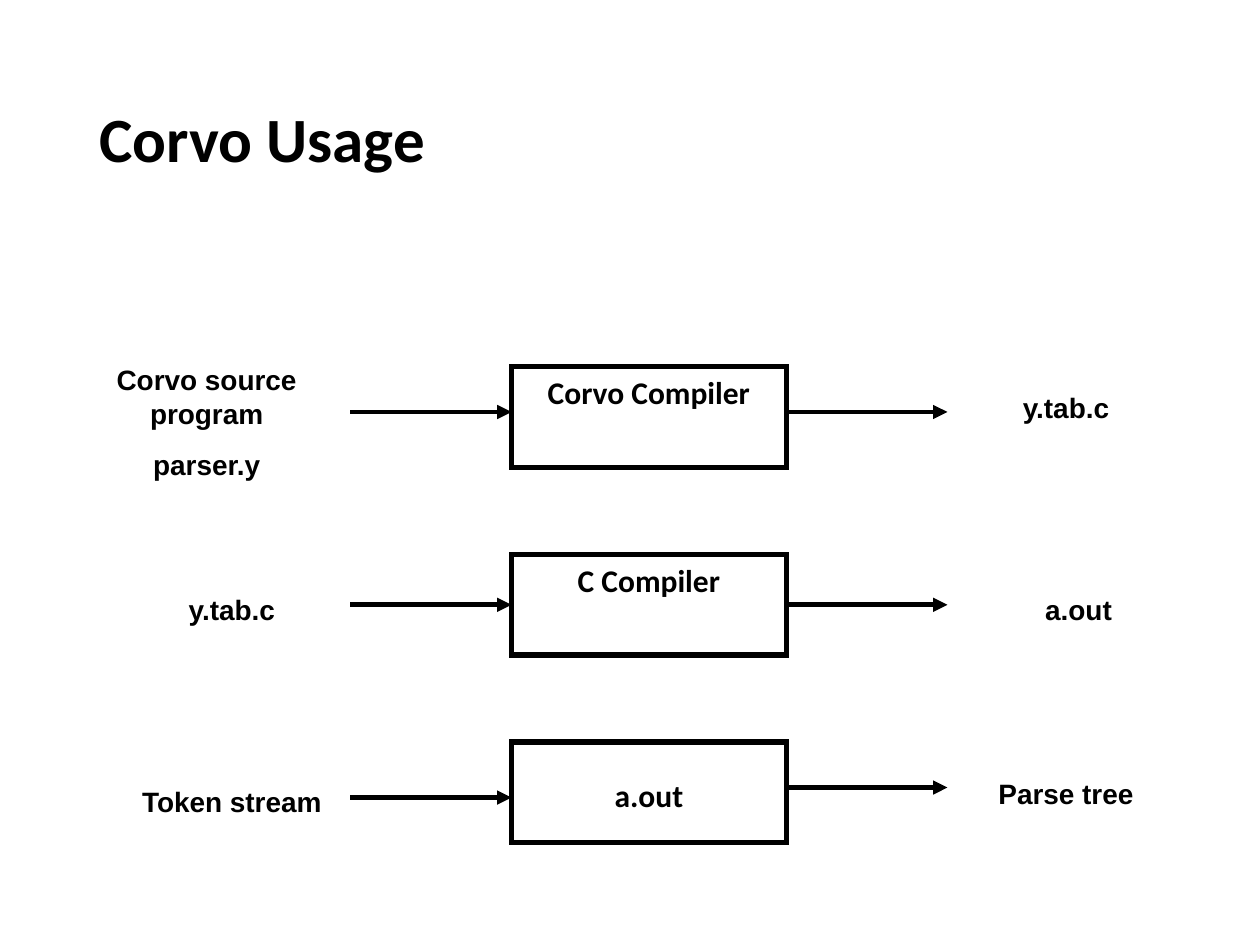
from dataclasses import dataclass

from lxml.etree import SubElement
from pptx import Presentation
from pptx.dml.color import RGBColor
from pptx.enum.shapes import MSO_CONNECTOR, MSO_SHAPE
from pptx.enum.text import MSO_ANCHOR, PP_ALIGN
from pptx.oxml.ns import qn
from pptx.util import Inches, Pt


@dataclass(frozen=True)
class Theme:
    ink: RGBColor = RGBColor(0, 0, 0)
    paper: RGBColor = RGBColor(255, 255, 255)
    heading_font: str = "Calibri"
    label_font: str = "Arial"
    title_size: int = 36
    process_size: int = 18
    label_size: int = 16
    border: float = 3
    arrow: float = 2.75


@dataclass(frozen=True)
class Stage:
    source: str
    process: str
    result: str
    source_box: tuple
    result_box: tuple
    process_top: float = 0
    arrow_in: float = 0.36
    arrow_out: float = 0.36


THEME = Theme()
STAGE_LEFT, STAGE_TOP, STAGE_STEP = 0.5, 2.91, 1.49
PROCESS_LEFT, PROCESS_WIDTH, PROCESS_HEIGHT = 3.56, 2.18, 0.8
PROCESS_INSET, ARROW_LENGTH = 0.1, 1.28

STAGES = [
    Stage("Corvo source program\nparser.y", "Corvo Compiler", "y.tab.c",
          (0, -0.08, 2.28, 0.91), (7.02, 0.14, 1.88, 0.32)),
    Stage("y.tab.c", "C Compiler", "a.out",
          (0.4, 0.25, 1.88, 0.32), (7.12, 0.25, 1.88, 0.32),
          arrow_in=0.4, arrow_out=0.4),
    Stage("Token stream", "a.out", "Parse tree",
          (0.4, 0.29, 1.88, 0.55), (7.02, 0.22, 1.88, 0.32),
          process_top=0.22, arrow_in=0.44),
]


def add_text(slide, text, box, font, size, space_before=0,
             align=PP_ALIGN.CENTER, anchor=MSO_ANCHOR.TOP):
    shape = slide.shapes.add_textbox(*map(Inches, box))
    text_frame = shape.text_frame
    text_frame.word_wrap = True
    text_frame.vertical_anchor = anchor
    text_frame.text = text
    for paragraph in text_frame.paragraphs:
        paragraph.alignment = align
        paragraph.space_before = Pt(space_before)
        for run in paragraph.runs:
            run.font.name = font
            run.font.size = Pt(size)
            run.font.bold = True
            run.font.color.rgb = THEME.ink
    return shape


def add_arrow(slide, left, top):
    connector = slide.shapes.add_connector(
        MSO_CONNECTOR.STRAIGHT, Inches(left), Inches(top),
        Inches(left + ARROW_LENGTH), Inches(top))
    connector.line.color.rgb = THEME.ink
    connector.line.width = Pt(THEME.arrow)
    SubElement(connector.line._get_or_add_ln(), qn("a:tailEnd"), type="triangle")
    SubElement(connector._element.spPr, qn("a:effectLst"))


def add_process(slide, left, top):
    shape = slide.shapes.add_shape(
        MSO_SHAPE.RECTANGLE, Inches(left), Inches(top),
        Inches(PROCESS_WIDTH), Inches(PROCESS_HEIGHT))
    shape.shadow.inherit = False
    shape.fill.solid()
    shape.fill.fore_color.rgb = THEME.paper
    shape.line.color.rgb = THEME.ink
    shape.line.width = Pt(THEME.border)
    SubElement(shape.line._get_or_add_ln(), qn("a:miter"), lim="800000")


def add_title(slide, box):
    shape = add_text(slide, "Corvo Usage", box, THEME.heading_font,
                     THEME.title_size, align=PP_ALIGN.LEFT,
                     anchor=MSO_ANCHOR.MIDDLE)
    shape.text_frame.paragraphs[0].line_spacing = 0.9


def add_stage(slide, stage, left, top):
    process_left = left + PROCESS_LEFT
    add_process(slide, process_left, top)
    add_text(slide, stage.process,
             (process_left + PROCESS_INSET, top + stage.process_top,
              PROCESS_WIDTH - 2 * PROCESS_INSET, 0.44),
             THEME.heading_font, THEME.process_size, space_before=15)
    add_arrow(slide, process_left - ARROW_LENGTH, top + stage.arrow_in)
    add_arrow(slide, process_left + PROCESS_WIDTH, top + stage.arrow_out)
    for text, box in ((stage.source, stage.source_box),
                      (stage.result, stage.result_box)):
        offset_x, offset_y, width, height = box
        add_text(slide, text, (left + offset_x, top + offset_y, width, height),
                 THEME.label_font, THEME.label_size, space_before=10)


def main():
    presentation = Presentation()
    presentation.slide_width = Inches(10)
    presentation.slide_height = Inches(7.5)
    slide = presentation.slides.add_slide(presentation.slide_layouts[6])
    add_title(slide, (0.69, 0.4, 8.62, 1.45))
    for index, stage in enumerate(STAGES):
        add_stage(slide, stage, STAGE_LEFT, STAGE_TOP + index * STAGE_STEP)
    presentation.save("out.pptx")


if __name__ == "__main__":
    main()
